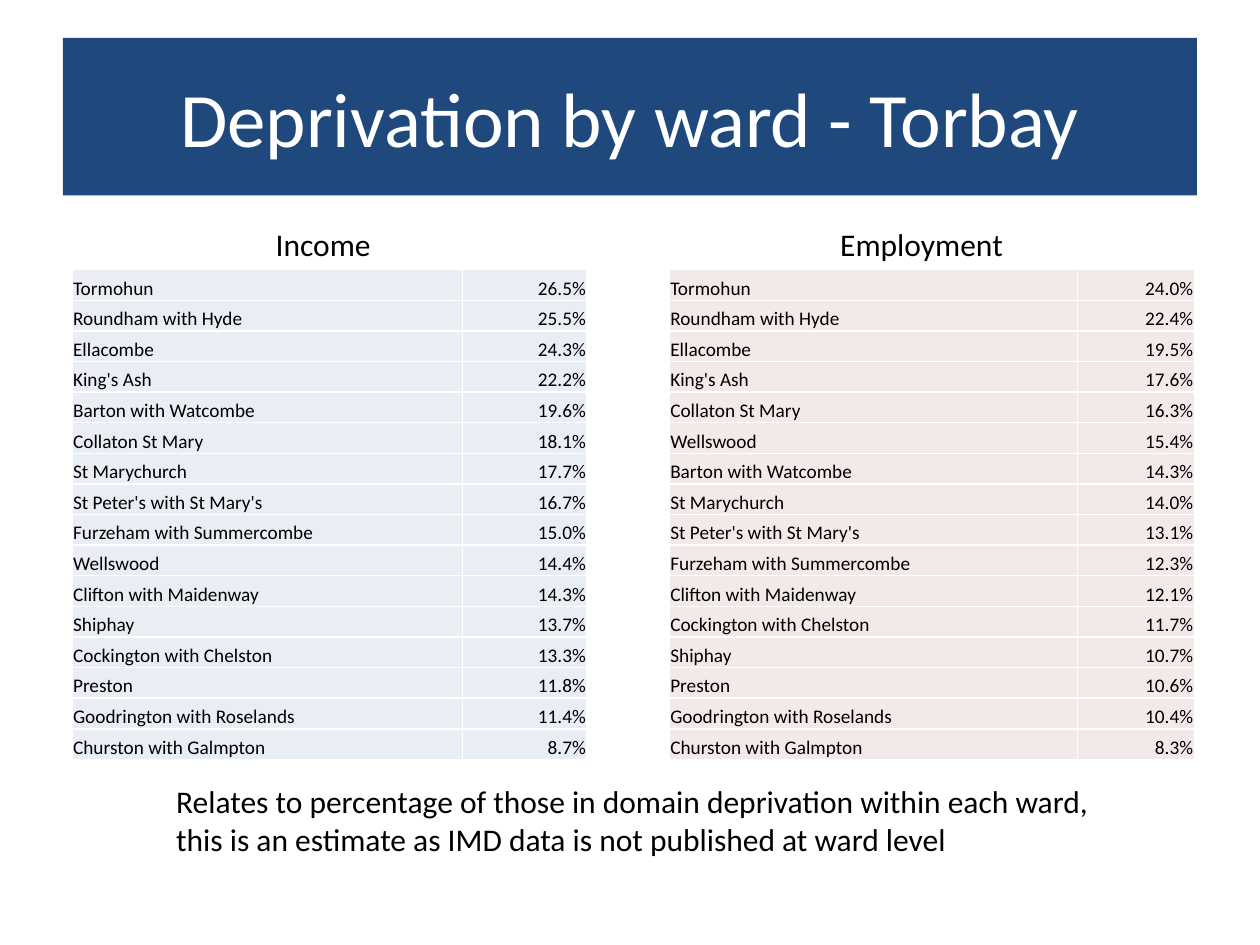
"""Build the Torbay ward deprivation slide."""
from pptx import Presentation
from pptx.dml.color import RGBColor
from pptx.enum.shapes import MSO_SHAPE
from pptx.enum.text import MSO_ANCHOR, MSO_AUTO_SIZE, PP_ALIGN
from pptx.oxml import parse_xml
from pptx.oxml.ns import nsdecls
from pptx.util import Inches, Pt

RECTANGLE = MSO_SHAPE.RECTANGLE
MIDDLE, BOTTOM = MSO_ANCHOR.MIDDLE, MSO_ANCHOR.BOTTOM
LEFT, CENTER, RIGHT = PP_ALIGN.LEFT, PP_ALIGN.CENTER, PP_ALIGN.RIGHT
FIT_SHAPE = MSO_AUTO_SIZE.SHAPE_TO_FIT_TEXT

NAVY = RGBColor(0x1F, 0x49, 0x7D)
PALE_BLUE = RGBColor(0xE9, 0xED, 0xF4)
PALE_RED = RGBColor(0xF4, 0xE9, 0xE9)
BLACK = RGBColor(0, 0, 0)
WHITE = RGBColor(255, 255, 255)

TABLE_TOP, TABLE_HEIGHT = 2.14, 3.89
HEADING_TOP, HEADING_HEIGHT = 1.74, 0.4

INCOME = [
    ("Tormohun", "26.5%"),
    ("Roundham with Hyde", "25.5%"),
    ("Ellacombe", "24.3%"),
    ("King's Ash", "22.2%"),
    ("Barton with Watcombe", "19.6%"),
    ("Collaton St Mary", "18.1%"),
    ("St Marychurch", "17.7%"),
    ("St Peter's with St Mary's", "16.7%"),
    ("Furzeham with Summercombe", "15.0%"),
    ("Wellswood", "14.4%"),
    ("Clifton with Maidenway", "14.3%"),
    ("Shiphay", "13.7%"),
    ("Cockington with Chelston", "13.3%"),
    ("Preston", "11.8%"),
    ("Goodrington with Roselands", "11.4%"),
    ("Churston with Galmpton", "8.7%"),
]
EMPLOYMENT = [
    ("Tormohun", "24.0%"),
    ("Roundham with Hyde", "22.4%"),
    ("Ellacombe", "19.5%"),
    ("King's Ash", "17.6%"),
    ("Collaton St Mary", "16.3%"),
    ("Wellswood", "15.4%"),
    ("Barton with Watcombe", "14.3%"),
    ("St Marychurch", "14.0%"),
    ("St Peter's with St Mary's", "13.1%"),
    ("Furzeham with Summercombe", "12.3%"),
    ("Clifton with Maidenway", "12.1%"),
    ("Cockington with Chelston", "11.7%"),
    ("Shiphay", "10.7%"),
    ("Preston", "10.6%"),
    ("Goodrington with Roselands", "10.4%"),
    ("Churston with Galmpton", "8.3%"),
]
NOTE = [
    "Relates to percentage of those in domain deprivation within each ward,",
    "this is an estimate as IMD data is not published at ward level",
]


def apply(target, values):
    for name, value in values.items():
        setattr(target, name, value)


class SlideBuilder:
    font_name = "Calibri"
    cell_format = {
        "vertical_anchor": BOTTOM,
        "margin_left": Inches(0.01),
        "margin_right": Inches(0.01),
        "margin_top": Inches(0.01),
        "margin_bottom": 0,
    }

    def __init__(self, slide):
        self.slide = slide

    def add_lines(self, frame, lines, size, color=BLACK, align=LEFT):
        for index, line in enumerate(lines):
            para = frame.add_paragraph() if index else frame.paragraphs[0]
            para.alignment = align
            span = para.add_run()
            span.text = line
            apply(span.font, {"name": self.font_name, "size": Pt(size)})
            span.font.color.rgb = color

    def banner(self, text, *bounds):
        box = self.slide.shapes.add_shape(RECTANGLE, *map(Inches, bounds))
        box.shadow.inherit = False
        box.fill.solid()
        box.fill.fore_color.rgb = NAVY
        box.line.fill.background()
        apply(box.text_frame, {"word_wrap": True, "vertical_anchor": MIDDLE})
        self.add_lines(box.text_frame, [text], 44, WHITE, CENTER)

    def label(self, lines, *bounds):
        box = self.slide.shapes.add_textbox(*map(Inches, bounds))
        apply(box.text_frame, {"word_wrap": False, "auto_size": FIT_SHAPE})
        self.add_lines(box.text_frame, lines, 18)

    def border(self, cell):
        properties = cell._tc.get_or_add_tcPr()
        for position, side in enumerate(("lnL", "lnR", "lnT", "lnB")):
            properties.insert(position, parse_xml(
                f'<a:{side} {nsdecls("a")} w="{Pt(1)}"><a:solidFill>'
                f'<a:srgbClr val="{WHITE}"/></a:solidFill></a:{side}>'))

    def ward_table(self, wards, left, widths, color):
        bounds = map(Inches, (left, TABLE_TOP, sum(widths), TABLE_HEIGHT))
        table = self.slide.shapes.add_table(len(wards), len(widths), *bounds).table
        apply(table, {"first_row": False, "horz_banding": False})
        for column, width in zip(table.columns, widths):
            column.width = Inches(width)
        for row, ward in zip(table.rows, wards):
            row.height = Inches(TABLE_HEIGHT / len(wards))
            for cell, text, align in zip(row.cells, ward, (LEFT, RIGHT)):
                apply(cell, self.cell_format)
                cell.fill.solid()
                cell.fill.fore_color.rgb = color
                self.border(cell)
                self.add_lines(cell.text_frame, [text], 11, align=align)


def main():
    deck = Presentation()
    apply(deck, {"slide_width": Inches(10), "slide_height": Inches(7.5)})
    page = SlideBuilder(deck.slides.add_slide(deck.slide_layouts[6]))
    page.banner("Deprivation by ward - Torbay", 0.5, 0.3, 9, 1.25)
    page.ward_table(INCOME, 0.57, (3.1, 0.99), PALE_BLUE)
    page.label(["Income"], 2.09, HEADING_TOP, 0.96, HEADING_HEIGHT)
    page.ward_table(EMPLOYMENT, 5.31, (3.24, 0.93), PALE_RED)
    page.label(["Employment"], 6.57, HEADING_TOP, 1.51, HEADING_HEIGHT)
    page.label(NOTE, 1.3, 6.16, 7.53, 0.71)
    deck.save("out.pptx")


if __name__ == "__main__":
    main()
